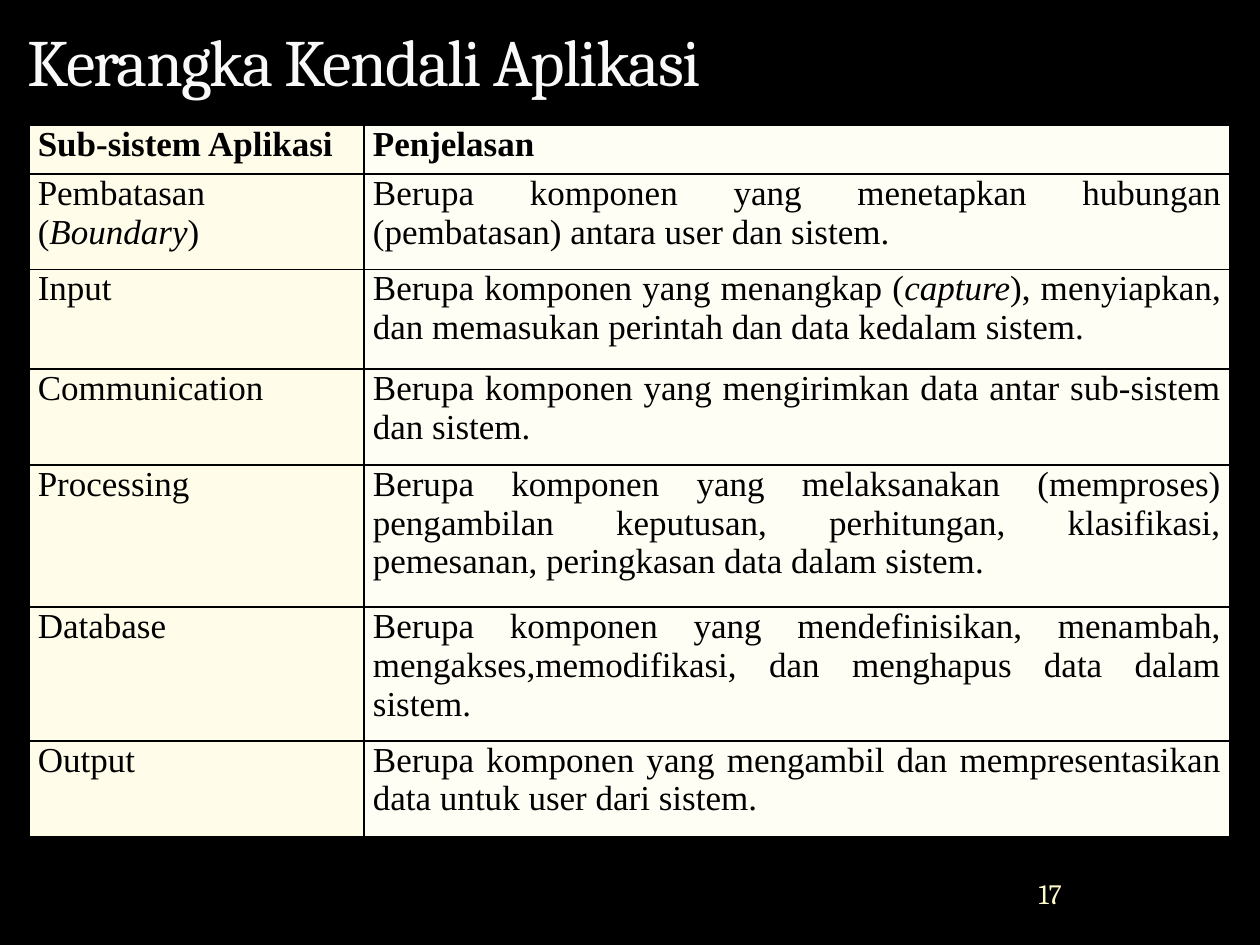
from dataclasses import dataclass

from lxml import etree
from pptx import Presentation
from pptx.dml.color import RGBColor
from pptx.enum.text import MSO_ANCHOR, PP_ALIGN
from pptx.oxml.ns import qn
from pptx.util import Inches, Pt

JUSTIFY = PP_ALIGN.JUSTIFY
LEFT = PP_ALIGN.LEFT
CENTER = PP_ALIGN.CENTER
BOTTOM = MSO_ANCHOR.BOTTOM
MIDDLE = MSO_ANCHOR.MIDDLE
TITLE_ONLY = 5

COLORS = {
    "background": "000000",
    "title": "F9F9F9",
    "number": "FEFAC9",
    "ink": "000000",
    "name_column": "FFFDE9",
    "text_column": "FFFEF4",
}
COLUMN_FILLS = ("name_column", "text_column")
COLUMN_WIDTHS = (2.66, 6.87)
BORDER_SIDES = ("a:lnL", "a:lnR", "a:lnT", "a:lnB")

TITLE_FONT = {"name": "Cambria", "size": Pt(37.8), "bold": False}
NUMBER_FONT = {"name": "Cambria", "size": Pt(16)}
TABLE_FONT = {"name": "Times New Roman", "size": Pt(20)}
CELL_FORMAT = {
    "margin_left": Inches(0.07),
    "margin_right": Inches(0.07),
    "margin_top": 0,
    "margin_bottom": 0,
}
TITLE_FRAME = {"vertical_anchor": BOTTOM, "word_wrap": True}
NUMBER_FRAME = {
    "vertical_anchor": MIDDLE,
    "word_wrap": True,
    "margin_left": 0,
    "margin_right": 0,
    "margin_top": 0,
    "margin_bottom": 0,
}


@dataclass
class SubsystemRow:
    name: str
    explanation: str
    height: float
    bold: bool = False


ROWS = [
    SubsystemRow("Sub-sistem Aplikasi", "Penjelasan", 0.39, True),
    SubsystemRow(
        "Pembatasan\n(*Boundary*)",
        "Berupa komponen yang menetapkan hubungan (pembatasan) antara user dan sistem.",
        0.76,
    ),
    SubsystemRow(
        "Input",
        "Berupa komponen yang menangkap (*capture*), menyiapkan, "
        "dan memasukan perintah dan data kedalam sistem.",
        0.79,
    ),
    SubsystemRow(
        "Communication",
        "Berupa komponen yang mengirimkan data antar sub-sistem dan sistem.",
        0.76,
    ),
    SubsystemRow(
        "Processing",
        "Berupa komponen yang melaksanakan (memproses) pengambilan keputusan, "
        "perhitungan, klasifikasi, pemesanan, peringkasan data dalam sistem.",
        1.13,
    ),
    SubsystemRow(
        "Database",
        "Berupa komponen yang mendefinisikan, menambah, "
        "mengakses,memodifikasi, dan menghapus data dalam sistem.",
        1.06,
    ),
    SubsystemRow(
        "Output",
        "Berupa komponen yang mengambil dan mempresentasikan data untuk user dari sistem.",
        0.76,
    ),
]


def apply_format(target, values: dict) -> None:
    for attribute, value in values.items():
        setattr(target, attribute, value)


def color(name: str) -> RGBColor:
    return RGBColor.from_string(COLORS[name])


def add_run(paragraph, text: str, font: dict, color_name: str):
    run = paragraph.add_run()
    run.text = text
    apply_format(run.font, font)
    run.font.color.rgb = color(color_name)
    return run


def write_cell(cell, text: str, bold: bool) -> None:
    frame = cell.text_frame
    for index, line in enumerate(text.split("\n")):
        paragraph = frame.add_paragraph() if index else frame.paragraphs[0]
        paragraph.alignment = JUSTIFY
        for part_index, part in enumerate(line.split("*")):
            font = {**TABLE_FONT, "bold": bold, "italic": part_index % 2 == 1}
            add_run(paragraph, part, font, "ink")


def add_borders(cell) -> None:
    properties = cell._tc.get_or_add_tcPr()
    for index, side in enumerate(BORDER_SIDES):
        line = etree.Element(qn(side), w=str(Pt(1)))
        fill = etree.SubElement(line, qn("a:solidFill"))
        etree.SubElement(fill, qn("a:srgbClr"), val=COLORS["ink"])
        properties.insert(index, line)


def add_subsystem_table(slide, rows: list[SubsystemRow]) -> None:
    table = slide.shapes.add_table(
        len(rows), len(COLUMN_WIDTHS), Inches(0.23), Inches(0.99),
        Inches(sum(COLUMN_WIDTHS)), Inches(sum(row.height for row in rows)),
    ).table
    for column, width in zip(table.columns, COLUMN_WIDTHS):
        column.width = Inches(width)
    for table_row, row in zip(table.rows, rows):
        table_row.height = Inches(row.height)
        texts = (row.name, row.explanation)
        for cell, text, fill_name in zip(table_row.cells, texts, COLUMN_FILLS):
            apply_format(cell, CELL_FORMAT)
            cell.fill.solid()
            cell.fill.fore_color.rgb = color(fill_name)
            add_borders(cell)
            write_cell(cell, text, row.bold)


def set_title(slide, text: str) -> None:
    title = slide.shapes.title
    apply_format(title, {
        "left": Inches(0.12), "top": Inches(0.28),
        "width": Inches(9), "height": Inches(0.56),
    })
    apply_format(title.text_frame, TITLE_FRAME)
    paragraph = title.text_frame.paragraphs[0]
    paragraph.alignment = LEFT
    run = add_run(paragraph, text, TITLE_FONT, "title")
    run.font._element.set("spc", "-100")


def add_page_number(slide, text: str) -> None:
    box = slide.shapes.add_textbox(Inches(7.17), Inches(6.83), Inches(2.33), Inches(0.52))
    apply_format(box.text_frame, NUMBER_FRAME)
    paragraph = box.text_frame.paragraphs[0]
    paragraph.alignment = CENTER
    add_run(paragraph, text, NUMBER_FONT, "number")


def main() -> None:
    presentation = Presentation()
    presentation.slide_width = Inches(10)
    presentation.slide_height = Inches(7.5)
    slide = presentation.slides.add_slide(presentation.slide_layouts[TITLE_ONLY])
    slide.background.fill.solid()
    slide.background.fill.fore_color.rgb = color("background")
    set_title(slide, "Kerangka Kendali Aplikasi")
    add_subsystem_table(slide, ROWS)
    add_page_number(slide, "17")
    presentation.save("out.pptx")


if __name__ == "__main__":
    main()
